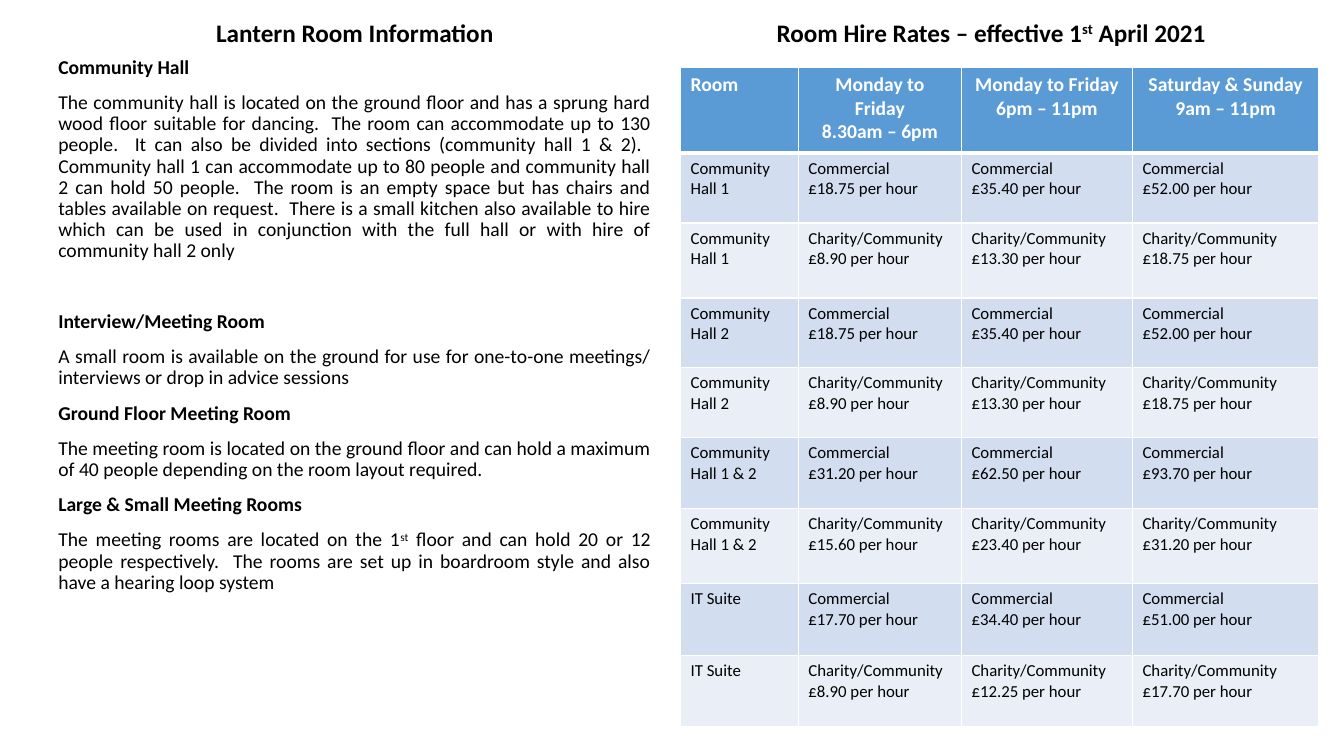
from pptx import Presentation
from pptx.dml.color import RGBColor
from pptx.enum.text import MSO_ANCHOR, PP_ALIGN
from pptx.oxml import parse_xml
from pptx.oxml.ns import nsdecls
from pptx.util import Cm, Pt

BLACK = RGBColor(0x00, 0x00, 0x00)
WHITE = RGBColor(0xFF, 0xFF, 0xFF)
BLUE = RGBColor(0x5B, 0x9B, 0xD5)
MID = RGBColor(0xD2, 0xDE, 0xEF)
PALE = RGBColor(0xEA, 0xEF, 0xF7)


def put(frame, text, size=14, bold=False, color=BLACK, align=None, line=None, gap=0):
    """Add a paragraph; text between carets is superscript."""
    para = frame.paragraphs[0]
    if para.runs:
        para = frame.add_paragraph()
        para.space_before = Pt(gap)
    para.alignment = align
    para.line_spacing = line
    for i, part in enumerate(text.split("^")):
        run = para.add_run()
        run.text = part
        run.font.name = "Calibri"
        run.font.size = Pt(size)
        run.font.bold = bold
        run.font.color.rgb = color
        if i % 2:
            run._r.get_or_add_rPr().set("baseline", "30000")


def edge(cell, side, width):
    """Draw one white border of a cell."""
    cell._tc.get_or_add_tcPr().append(parse_xml(
        f'<a:ln{side} {nsdecls("a")} w="{Pt(width)}"><a:solidFill>'
        f'<a:srgbClr val="{WHITE}"/></a:solidFill></a:ln{side}>'))


deck = Presentation()
deck.slide_width, deck.slide_height = Cm(33.87), Cm(19.05)
slide = deck.slides.add_slide(deck.slide_layouts[6])

# Headings of both halves
heads = [
    ("Lantern Room Information", 1.22, 15.44),
    ("Room Hire Rates – effective 1^st^ April 2021", 17.15, 15.65),
]
for text, left, width in heads:
    frame = slide.shapes.add_textbox(Cm(left), Cm(0.36), Cm(width), Cm(0.97)).text_frame
    frame.word_wrap = True
    frame.vertical_anchor = MSO_ANCHOR.BOTTOM
    put(frame, text, size=18, bold=True, align=PP_ALIGN.CENTER, line=0.9)

# Room descriptions: title, text, space before the title
rooms = [
    ("Community Hall",
     "The community hall is located on the ground floor and has a sprung hard wood "
     "floor suitable for dancing.  The room can accommodate up to 130 people.  It can "
     "also be divided into sections (community hall 1 & 2).  Community hall 1 can "
     "accommodate up to 80 people and community hall 2 can hold 50 people.  The room is "
     "an empty space but has chairs and tables available on request.  There is a small "
     "kitchen also available to hire which can be used in conjunction with the full "
     "hall or with hire of community hall 2 only", 0),
    ("Interview/Meeting Room",
     "A small room is available on the ground for use for one-to-one meetings/ "
     "interviews or drop in advice sessions", 35.4),
    ("Ground Floor Meeting Room",
     "The meeting room is located on the ground floor and can hold a maximum of 40 "
     "people depending on the room layout required.", 10),
    ("Large & Small Meeting Rooms",
     "The meeting rooms are located on the 1^st^ floor and can hold 20 or 12 people "
     "respectively.  The rooms are set up in boardroom style and also have a hearing "
     "loop system", 10),
]
frame = slide.shapes.add_textbox(Cm(1.22), Cm(1.32), Cm(15.44), Cm(16.94)).text_frame
frame.word_wrap = True
for title, text, gap in rooms:
    put(frame, title, bold=True, align=PP_ALIGN.JUSTIFY, line=0.9, gap=gap)
    put(frame, text, align=PP_ALIGN.JUSTIFY, line=0.9, gap=10)

# Hire rates: rows alternate between commercial and charity
top = [["Room"], ["Monday to Friday", "8.30am – 6pm"],
       ["Monday to Friday", "6pm – 11pm"], ["Saturday & Sunday", "9am – 11pm"]]
rates = [
    ("Community Hall 1", "18.75", "35.40", "52.00"),
    ("Community Hall 1", "8.90", "13.30", "18.75"),
    ("Community Hall 2", "18.75", "35.40", "52.00"),
    ("Community Hall 2", "8.90", "13.30", "18.75"),
    ("Community Hall 1 & 2", "31.20", "62.50", "93.70"),
    ("Community Hall 1 & 2", "15.60", "23.40", "31.20"),
    ("IT Suite", "17.70", "34.40", "51.00"),
    ("IT Suite", "8.90", "12.25", "17.70"),
]
grid = [top]
for i, (room, *costs) in enumerate(rates):
    kind = "Charity/Community" if i % 2 else "Commercial"
    grid.append([[room]] + [[kind, f"£{cost} per hour"] for cost in costs])

wide = [2.97, 4.11, 4.31, 4.7]
high = [2.16, 1.76, 1.89, 1.76, 1.76, 1.79, 1.89, 1.81, 1.79]
table = slide.shapes.add_table(len(high), len(wide), Cm(17.15), Cm(1.7),
                               Cm(sum(wide)), Cm(sum(high))).table
for col, width in zip(table.columns, wide):
    col.width = Cm(width)
for row, height in zip(table.rows, high):
    row.height = Cm(height)

for r, cells in enumerate(grid):
    for c, lines in enumerate(cells):
        cell = table.cell(r, c)
        edge(cell, "L", 1)
        edge(cell, "R", 1)
        edge(cell, "T", 3 if r == 1 else 1)
        edge(cell, "B", 3 if r == 0 else 1)
        cell.fill.solid()
        cell.fill.fore_color.rgb = BLUE if r == 0 else MID if r % 2 else PALE
        for text in lines:
            if r == 0:
                put(cell.text_frame, text, bold=True, color=WHITE,
                    align=PP_ALIGN.CENTER if c else PP_ALIGN.LEFT)
            else:
                put(cell.text_frame, text, size=12)

deck.save("out.pptx")
